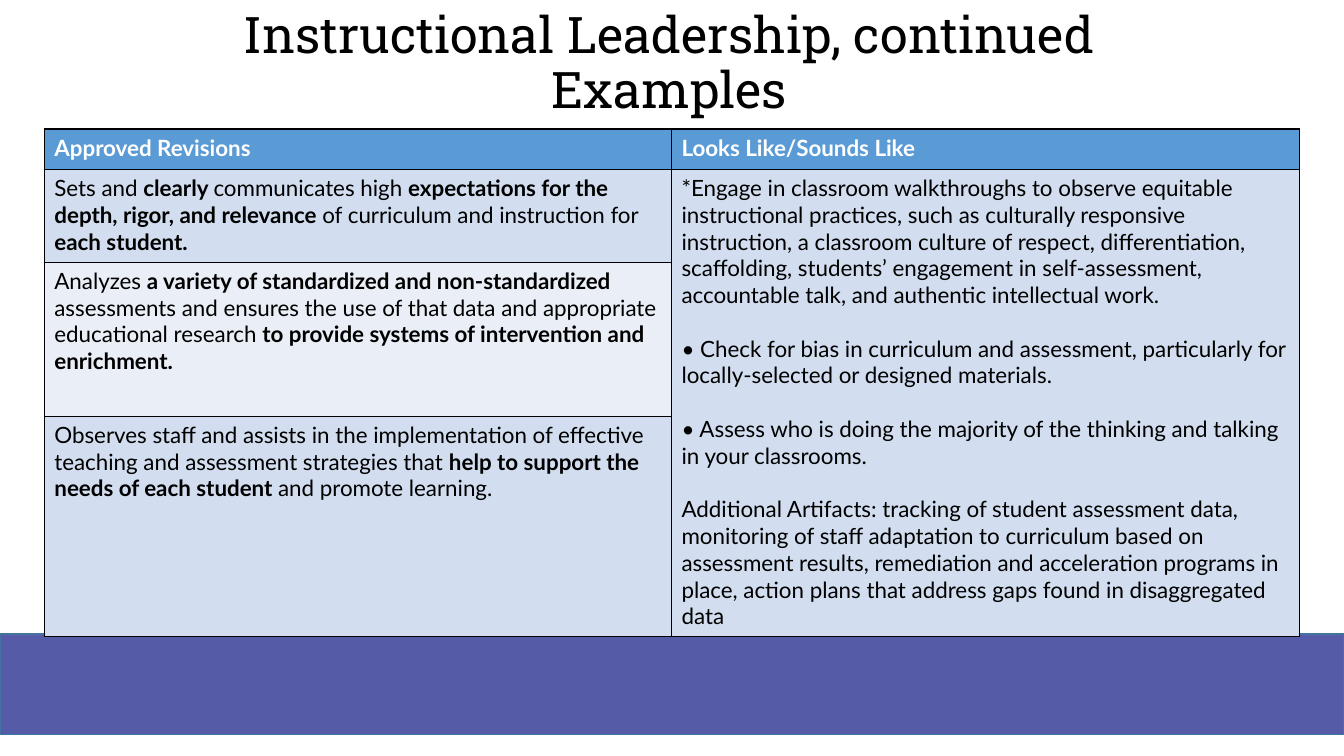
"""Builds the Instructional Leadership examples slide."""
from dataclasses import dataclass

from lxml import etree
from pptx import Presentation
from pptx.dml.color import RGBColor
from pptx.enum.shapes import MSO_SHAPE
from pptx.enum.text import MSO_ANCHOR, PP_ALIGN
from pptx.oxml.ns import qn
from pptx.util import Inches, Pt

RECTANGLE = MSO_SHAPE.RECTANGLE
MIDDLE = MSO_ANCHOR.MIDDLE
CENTER = PP_ALIGN.CENTER
SLIDE_WIDTH, SLIDE_HEIGHT = Inches(13.33), Inches(7.5)
BORDER_SIDES = ("a:lnL", "a:lnR", "a:lnT", "a:lnB")


@dataclass(frozen=True)
class Theme:
    black: str = "000000"
    white: str = "FFFFFF"
    band: str = "565BA7"
    band_line: str = "43739E"
    header: str = "5B9BD5"
    dark_row: str = "D2DEEF"
    light_row: str = "EAEFF7"
    title_font: str = "Roboto Slab"
    body_font: str = "Lato"
    title_size: float = 36
    body_size: float = 16
    blank_line: float = 19.2


@dataclass(frozen=True)
class Span:
    text: str
    bold: bool = False


@dataclass(frozen=True)
class Para:
    spans: tuple[Span, ...]
    gap_before: bool = False


@dataclass(frozen=True)
class Cell:
    row: int
    column: int
    fill: str
    paras: tuple[Para, ...]
    color: str


@dataclass(frozen=True)
class Area:
    left: float
    top: float
    width: float
    height: float

    def place(self) -> tuple[int, int, int, int]:
        """Turn shares of the slide into lengths."""
        return (int(SLIDE_WIDTH * self.left), int(SLIDE_HEIGHT * self.top),
                int(SLIDE_WIDTH * self.width), int(SLIDE_HEIGHT * self.height))


THEME = Theme()
BAND = Area(0, 0.8387, 1, 0.1333)
TITLE = Area(0.048, 0.0267, 0.9, 0.1173)
TABLE = Area(0.033, 0.1707, 0.934, 0.668)
COLUMN_SHARES = (0.4996, 0.5004)
ROW_SHARES = (0.08, 0.184, 0.305, 0.431)
TITLE_LINES = ("Instructional Leadership, continued", "Examples")


def mixed(*texts: str) -> tuple[Para, ...]:
    """Make one paragraph whose spans alternate regular and bold."""
    return (Para(tuple(Span(text, index % 2 == 1) for index, text in enumerate(texts))),)


def plain(text: str, gap_before: bool = False) -> Para:
    """Make a regular paragraph of one span."""
    return Para((Span(text),), gap_before)


def heading(text: str) -> tuple[Para, ...]:
    """Make a bold paragraph of one span."""
    return (Para((Span(text, True),)),)


CELLS = (
    Cell(0, 0, THEME.header, heading("Approved Revisions"), THEME.white),
    Cell(0, 1, THEME.header, heading("Looks Like/Sounds Like"), THEME.white),
    Cell(1, 0, THEME.dark_row, mixed(
        "Sets and ", "clearly ", "communicates high ",
        "expectations for the depth, rigor, and relevance ",
        "of curriculum and instruction for ", "each student."), THEME.black),
    Cell(2, 0, THEME.light_row, mixed(
        "Analyzes ", "a variety of standardized and non-standardized ",
        "assessments and ensures the use of that data and appropriate educational research ",
        "to provide systems of intervention and enrichment."), THEME.black),
    Cell(3, 0, THEME.dark_row, mixed(
        "Observes staff and assists in the implementation of effective teaching and "
        "assessment strategies that ",
        "help to support the needs of each student ", "and promote learning."), THEME.black),
    Cell(1, 1, THEME.dark_row, (
        plain("*Engage in classroom walkthroughs to observe equitable instructional practices, "
              "such as culturally responsive instruction, a classroom culture of respect, "
              "differentiation,"),
        plain("scaffolding, students’ engagement in self-assessment, accountable talk, "
              "and authentic intellectual work."),
        plain("• Check for bias in curriculum and assessment, particularly for "
              "locally-selected or designed materials.", True),
        plain("• Assess who is doing the majority of the thinking and talking in your "
              "classrooms.", True),
        plain("Additional Artifacts: tracking of student assessment data, monitoring of staff "
              "adaptation to curriculum based on assessment results, remediation and "
              "acceleration programs in place, action plans that address gaps found in "
              "disaggregated data", True)), THEME.black),
)


def rgb(value: str) -> RGBColor:
    return RGBColor.from_string(value)


def style_font(font, name: str, size: float, color: str) -> None:
    font.name, font.size = name, Pt(size)
    font.color.rgb = rgb(color)


def draw_band(page) -> None:
    band = page.shapes.add_shape(RECTANGLE, *BAND.place())
    band.shadow.inherit = False
    band.fill.solid()
    band.fill.fore_color.rgb = rgb(THEME.band)
    band.line.color.rgb = rgb(THEME.band_line)
    band.line.width = Pt(1)


def draw_title(page) -> None:
    frame = page.shapes.add_textbox(*TITLE.place()).text_frame
    frame.word_wrap = True
    frame.vertical_anchor = MIDDLE
    para = frame.paragraphs[0]
    para.alignment, para.line_spacing = CENTER, 0.9
    para.text = "\v".join(TITLE_LINES)
    style_font(para.font, THEME.title_font, THEME.title_size, THEME.black)


def add_borders(cell) -> None:
    properties = cell._tc.get_or_add_tcPr()
    for index, side in enumerate(BORDER_SIDES):
        line = etree.Element(qn(side), w=str(Pt(1)))
        fill = etree.SubElement(line, qn("a:solidFill"))
        etree.SubElement(fill, qn("a:srgbClr"), val=THEME.black)
        properties.insert(index, line)


def fill_cell(table, content: Cell) -> None:
    cell = table.cell(content.row, content.column)
    cell.fill.solid()
    cell.fill.fore_color.rgb = rgb(content.fill)
    frame = cell.text_frame
    for index, source in enumerate(content.paras):
        para = frame.add_paragraph() if index else frame.paragraphs[0]
        if source.gap_before:
            para.space_before = Pt(THEME.blank_line)
        style_font(para.font, THEME.body_font, THEME.body_size, content.color)
        for span in source.spans:
            run = para.add_run()
            run.text, run.font.bold = span.text, span.bold


def draw_table(page) -> None:
    left, top, width, height = TABLE.place()
    table = page.shapes.add_table(
        len(ROW_SHARES), len(COLUMN_SHARES), left, top, width, height).table
    for column, share in zip(table.columns, COLUMN_SHARES):
        column.width = int(width * share)
    for row, share in zip(table.rows, ROW_SHARES):
        row.height = int(height * share)
    table.cell(1, 1).merge(table.cell(3, 1))
    for content in CELLS:
        fill_cell(table, content)
    for cell in table.iter_cells():
        add_borders(cell)


def main() -> None:
    deck = Presentation()
    deck.slide_width, deck.slide_height = SLIDE_WIDTH, SLIDE_HEIGHT
    page = deck.slides.add_slide(deck.slide_layouts[6])
    draw_band(page)
    draw_title(page)
    draw_table(page)
    deck.save("out.pptx")


if __name__ == "__main__":
    main()
